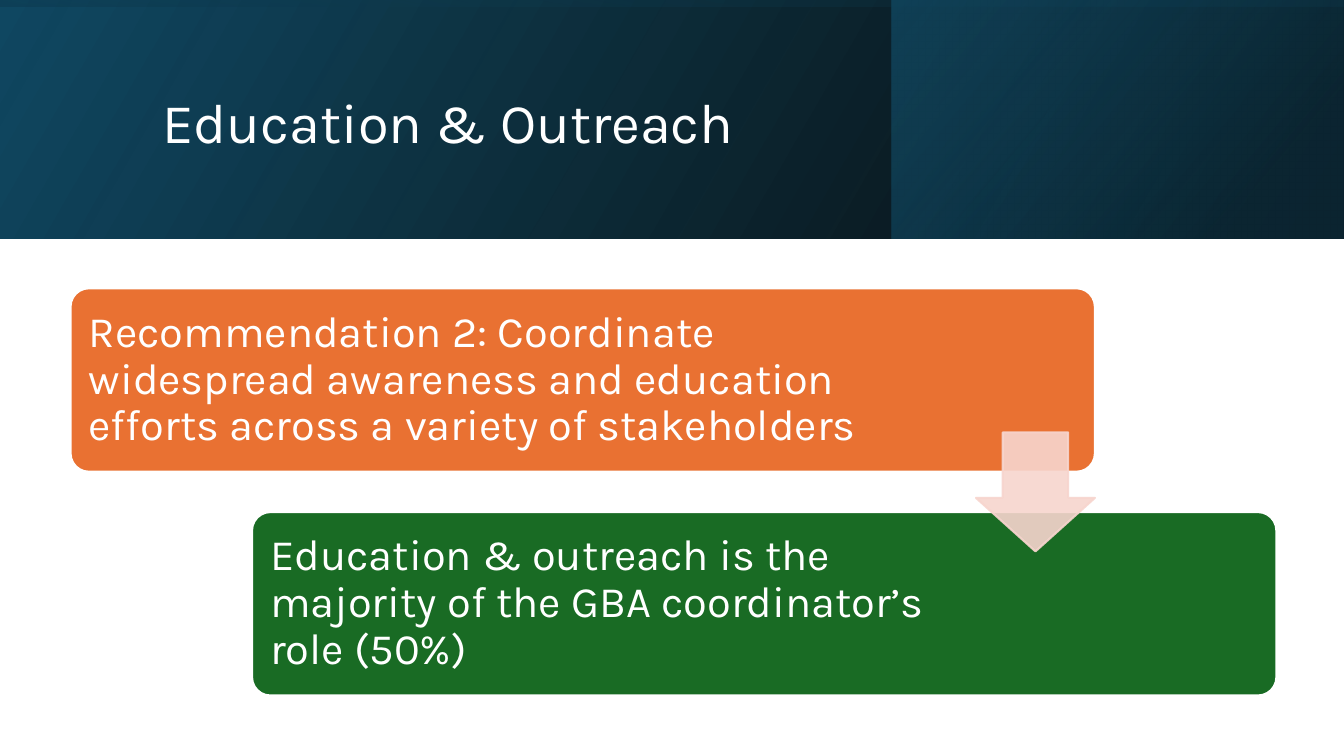
from lxml import etree
from pptx import Presentation
from pptx import util as u
from pptx.dml.color import RGBColor
from pptx.enum import shapes, text
from pptx.oxml import parse_xml
from pptx.oxml.ns import nsdecls, qn

BAND_HEIGHT = 2.37
SLIDE_WIDTH = 13.33
CARD_WIDTH, CARD_HEIGHT = 10.16, 1.82
CARD_PADDING = 0.05
CARDS = [
    (0.7, 2.86, 8.28, "E97132",
     "Recommendation 2: Coordinate widespread awareness and education "
     "efforts across a variety of stakeholders"),
    (2.5, 5.08, 7.08, "196B24",
     "Education & outreach is the majority of the GBA coordinator’s role (50%)"),
]
BANDS = [
    ((0, 0, SLIDE_WIDTH, BAND_HEIGHT), 0, 330,
     [(0, "000000", 96), (100, "104862", 100)]),
    ((8.84, 0, 4.48, BAND_HEIGHT), 0, 320,
     [(19, "0B3041", 68), (100, "156082", 48)]),
    ((5.48, -5.48, BAND_HEIGHT, SLIDE_WIDTH), 270, 350,
     [(23, "104862", 16), (99, "000000", 45)]),
]


def color(value):
    return RGBColor.from_string(value)


def set_alpha(properties, percent):
    for node in properties.iter(qn("a:srgbClr")):
        etree.SubElement(node, qn("a:alpha")).set("val", str(percent * 1000))


class SlideBuilder:
    font = "Karla"
    text_color = "FFFFFF"
    line_width = 1.5

    def __init__(self, presentation):
        self.slide = presentation.slides.add_slide(presentation.slide_layouts[5])

    def shape(self, kind, box, adjustments=()):
        shape = self.slide.shapes.add_shape(kind, *map(u.Inches, box))
        shape.shadow.inherit = False
        for index, value in enumerate(adjustments):
            shape.adjustments[index] = value
        return shape

    def solid(self, shape, fill, line):
        shape.fill.solid()
        shape.fill.fore_color.rgb = color(fill)
        shape.line.color.rgb = color(line)
        shape.line.width = u.Pt(self.line_width)

    def gradient_band(self, box, rotation, angle, stops):
        shape = self.shape(shapes.MSO_SHAPE.RECTANGLE, box)
        shape.rotation = rotation
        shape.line.fill.background()
        properties = shape._element.spPr
        properties.find(qn("a:xfrm")).set("flipH", "1")
        stop_xml = "".join(
            f'<a:gs pos="{position * 1000}"><a:srgbClr val="{value}">'
            f'<a:alpha val="{alpha * 1000}"/></a:srgbClr></a:gs>'
            for position, value, alpha in stops)
        gradient = parse_xml(
            f'<a:gradFill {nsdecls("a")} rotWithShape="1"><a:gsLst>{stop_xml}</a:gsLst>'
            f'<a:lin ang="{angle * 60000}" scaled="0"/></a:gradFill>')
        properties.find(qn("a:prstGeom")).addnext(gradient)

    def set_wording(self, shape, wording, size):
        frame = shape.text_frame
        frame.text = wording
        frame.word_wrap = True
        frame.auto_size = text.MSO_AUTO_SIZE.NONE
        frame.vertical_anchor = text.MSO_ANCHOR.MIDDLE
        paragraph = frame.paragraphs[0]
        paragraph.alignment = text.PP_ALIGN.LEFT
        paragraph.line_spacing = 0.9
        for run in paragraph.runs:
            run.font.name = self.font
            run.font.size = u.Pt(size)
            run.font.color.rgb = color(self.text_color)
        return frame

    def title(self, wording, box):
        title = self.slide.shapes.title
        title.left, title.top, title.width, title.height = map(u.Inches, box)
        self.set_wording(title, wording, 40)
        self.slide.shapes._spTree.append(title._element)

    def card(self, left, top, text_width, fill, wording):
        card = self.shape(shapes.MSO_SHAPE.ROUNDED_RECTANGLE,
                          (left, top, CARD_WIDTH, CARD_HEIGHT), [0.1])
        self.solid(card, fill, "FFFFFF")
        box = (left + CARD_PADDING, top + CARD_PADDING,
               text_width, CARD_HEIGHT - 2 * CARD_PADDING)
        label = self.slide.shapes.add_textbox(*map(u.Inches, box))
        frame = self.set_wording(label, wording, 31)
        frame.margin_left = frame.margin_right = u.Inches(0.13)
        frame.margin_top = frame.margin_bottom = u.Inches(0.13)

    def down_arrow(self, box, fill, opacity):
        arrow = self.shape(shapes.MSO_SHAPE.DOWN_ARROW, box, [0.55, 0.45])
        self.solid(arrow, fill, fill)
        set_alpha(arrow._element.spPr, opacity)


def main():
    presentation = Presentation()
    presentation.slide_width = u.Inches(SLIDE_WIDTH)
    presentation.slide_height = u.Inches(7.5)
    builder = SlideBuilder(presentation)
    for band in BANDS:
        builder.gradient_band(*band)
    builder.title("Education & Outreach", (1.51, 0.38, 10.63, 1.72))
    for card in CARDS:
        builder.card(*card)
    builder.down_arrow((9.68, 4.29, 1.18, 1.18), "F7D5CE", 90)
    presentation.save("out.pptx")


if __name__ == "__main__":
    main()
